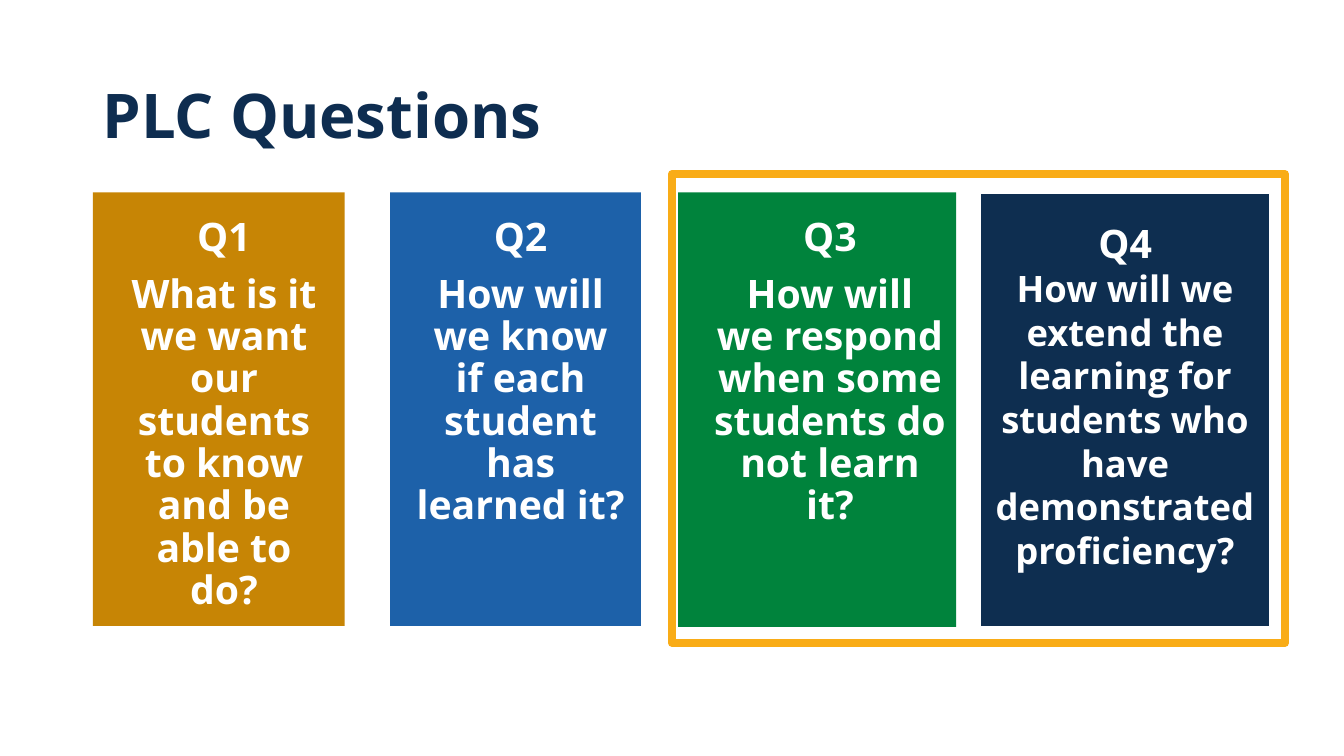
import dataclasses

import lxml.etree
import pptx
import pptx.dml.color
import pptx.enum.shapes
import pptx.enum.text
import pptx.oxml.ns
import pptx.shapes.autoshape
import pptx.slide
import pptx.text.text
import pptx.util

Cm = pptx.util.Cm
Pt = pptx.util.Pt
RGBColor = pptx.dml.color.RGBColor
ALIGN = pptx.enum.text.PP_ALIGN

WHITE = RGBColor(0xFF, 0xFF, 0xFF)
GOLD = RGBColor(0xC7, 0x85, 0x05)
BLUE = RGBColor(0x1D, 0x61, 0xA9)
GREEN = RGBColor(0x00, 0x83, 0x3C)
NAVY = RGBColor(0x0E, 0x2E, 0x50)
INK = RGBColor(0x0E, 0x2D, 0x50)
AMBER = RGBColor(0xF9, 0xAC, 0x17)
FONT = "Open Sans"


@dataclasses.dataclass(frozen=True)
class Card:
    label: str
    query: str
    fill: RGBColor
    left: float
    top: float
    width: float
    height: float
    pads: tuple[float, float] = (0.25, 0.25)
    size: float = 28
    indent: float = 0.64
    pitch: float = 0.9
    gap: float = 10
    edge: bool = False


CARDS = [
    Card("Q1", "What is it we want our students to know and be able to do?",
         GOLD, 2.34, 4.85, 6.35, 10.92, pads=(0, 0.38)),
    Card("Q2", "How will we know if each student has learned it?",
         BLUE, 9.83, 4.85, 6.32, 10.92, pads=(0, 0.38)),
    Card("Q3", "How will we respond when some students do not learn it?",
         GREEN, 17.09, 4.85, 7.01, 10.95),
    Card("Q4", "How will we extend the learning for students who have "
         "demonstrated proficiency?",
         NAVY, 24.71, 4.88, 7.29, 10.9,
         size=26, indent=0, pitch=1, gap=0, edge=True),
]


def add_box(slide: pptx.slide.Slide, left: float, top: float,
            width: float, height: float) -> pptx.shapes.autoshape.Shape:
    box = slide.shapes.add_shape(
        pptx.enum.shapes.MSO_SHAPE.RECTANGLE,
        Cm(left), Cm(top), Cm(width), Cm(height))
    box.shadow.inherit = False
    return box


def set_frame(frame: pptx.text.text.TextFrame, left: float, top: float,
              right: float) -> None:
    frame.word_wrap = True
    frame.vertical_anchor = pptx.enum.text.MSO_ANCHOR.TOP
    frame.margin_left, frame.margin_top = Cm(left), Cm(top)
    frame.margin_right, frame.margin_bottom = Cm(right), Cm(0.13)


def add_run(para: pptx.text.text._Paragraph, text: str, size: float,
            color: RGBColor) -> None:
    run = para.add_run()
    run.text = text
    run.font.name = FONT
    run.font.size = Pt(size)
    run.font.bold = True
    run.font.color.rgb = color


def draw_card(slide: pptx.slide.Slide, card: Card) -> None:
    box = add_box(slide, card.left, card.top, card.width, card.height)
    box.fill.solid()
    box.fill.fore_color.rgb = card.fill
    if card.edge:
        box.line.color.rgb = WHITE
        box.line.width = Pt(0.75)
    else:
        box.line.fill.background()
    frame = box.text_frame
    set_frame(frame, card.pads[0], 0.64, card.pads[1])
    head, body = frame.paragraphs[0], frame.add_paragraph()
    for para in (head, body):
        para.alignment = ALIGN.CENTER
        para.line_spacing = card.pitch
        para._p.get_or_add_pPr().set("marL", str(int(Cm(card.indent))))
    body.space_before = Pt(card.gap)
    add_run(head, card.label, 28, WHITE)
    add_run(body, card.query, card.size, WHITE)


def draw_frame(slide: pptx.slide.Slide) -> None:
    box = add_box(slide, 16.94, 4.39, 15.44, 11.81)
    box.fill.background()
    box.line.color.rgb = AMBER
    box.line.width = Pt(6)
    lxml.etree.SubElement(box.line._get_or_add_ln(),
                          pptx.oxml.ns.qn("a:round"))


def draw_title(slide: pptx.slide.Slide) -> None:
    box = slide.shapes.add_textbox(Cm(2.34), Cm(2.01), Cm(29.21), Cm(2.01))
    set_frame(box.text_frame, 0.25, 0.13, 0.25)
    para = box.text_frame.paragraphs[0]
    para.line_spacing = 0.9
    add_run(para, "PLC Questions", 44, INK)


def main() -> None:
    deck = pptx.Presentation()
    deck.slide_width, deck.slide_height = Cm(33.87), Cm(19.05)
    slide = deck.slides.add_slide(deck.slide_layouts[6])
    draw_frame(slide)
    draw_title(slide)
    for card in CARDS:
        draw_card(slide, card)
    deck.save("out.pptx")


if __name__ == "__main__":
    main()
